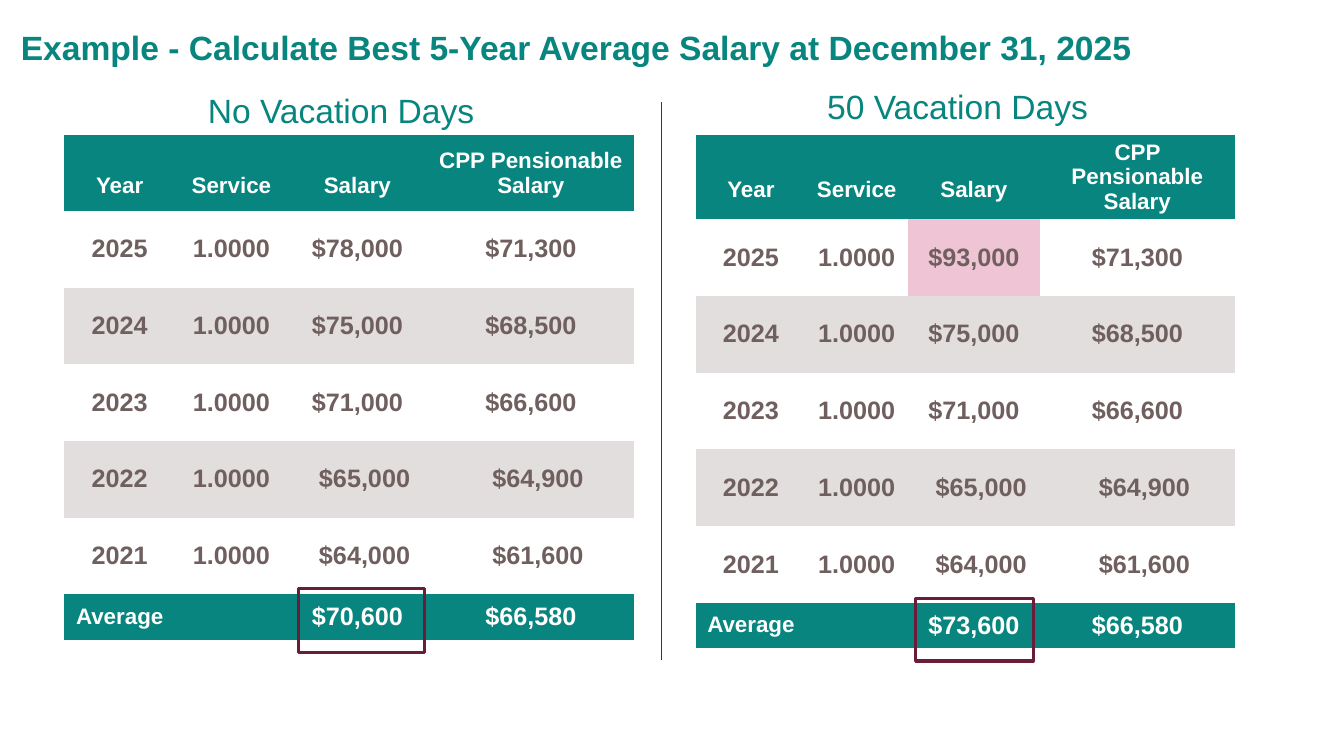
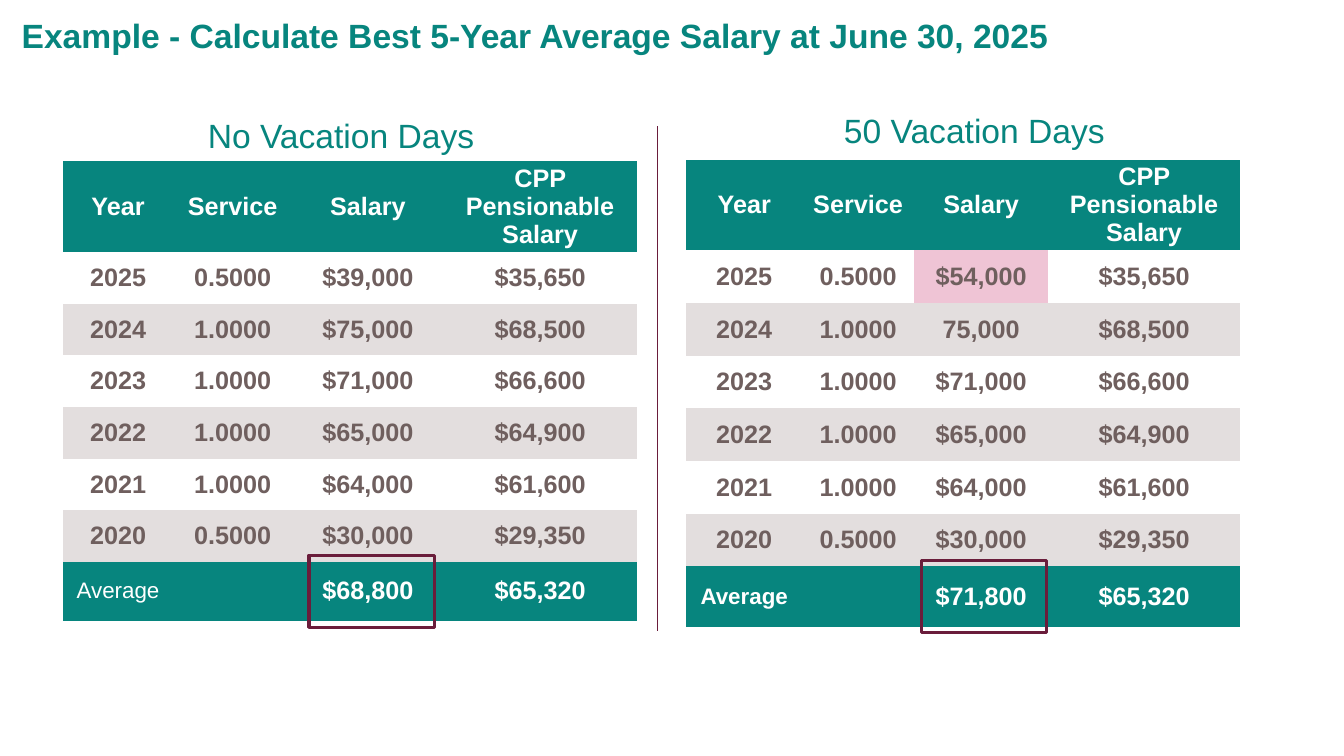
from dataclasses import dataclass

from lxml.etree import SubElement
from pptx import Presentation
from pptx.dml.color import RGBColor
from pptx.enum.shapes import MSO_CONNECTOR, MSO_SHAPE
from pptx.enum.text import MSO_ANCHOR, PP_ALIGN
from pptx.oxml.ns import qn
from pptx.util import Inches, Pt

GRID_COLUMNS, GRID_ROWS = 160, 90
SLIDE_HEIGHT = Inches(7.5)
SLIDE_WIDTH = SLIDE_HEIGHT * GRID_COLUMNS // GRID_ROWS
PLAIN_TABLE_STYLE = "{2D5ABB26-0587-4C30-8999-92F81FD0307C}"
HEADINGS = ("Year", "Service", "Salary", "CPP Pensionable Salary")
SALARY_COLUMN = 2
CAPTION_SIZE = (66, 5)


@dataclass(frozen=True)
class Theme:
    font: str = "Arial"
    teal: str = "07857E"
    white: str = "FFFFFF"
    band: str = "E3DEDE"
    highlight: str = "EFC4D5"
    body_text: str = "6F5F5E"
    accent: str = "6A1D3B"
    title_size: int = 24
    body_size: int = 18
    label_size: int = 16
    divider_width: float = 0.5
    frame_width: float = 2.25


THEME = Theme()


@dataclass(frozen=True)
class Panel:
    caption: str
    caption_at: tuple
    table_at: tuple
    column_widths: tuple
    header_height: float
    body_height: float
    average_height: float
    salaries: tuple
    average_salary: str
    frame: tuple
    highlighted: bool = False
    bold_average: bool = True


@dataclass(frozen=True)
class Example:
    title: str
    title_box: tuple
    divider: tuple
    years: tuple
    services: tuple
    pensionable: tuple
    average_pensionable: str
    panels: tuple
    header_size: int
    side_margin: float
    header_drop: float = 0
    shifted_years: tuple = ()


def grid(*cells):
    return [round(cell * SLIDE_HEIGHT / GRID_ROWS) for cell in cells]


def color(value):
    return RGBColor.from_string(value)


def write(text_frame, text, size, text_color, bold, alignment=PP_ALIGN.CENTER):
    text_frame.text = text
    paragraph = text_frame.paragraphs[0]
    paragraph.alignment = alignment
    for run in paragraph.runs:
        run.font.name = THEME.font
        run.font.size = Pt(size)
        run.font.bold = bold
        run.font.color.rgb = color(text_color)
    return paragraph


def add_text(slide, box, text, bold=False, alignment=PP_ALIGN.CENTER):
    text_frame = slide.shapes.add_textbox(*grid(*box)).text_frame
    text_frame.word_wrap = True
    text_frame.vertical_anchor = MSO_ANCHOR.MIDDLE
    return write(text_frame, text, THEME.title_size, THEME.teal, bold, alignment)


def add_title(slide, example):
    paragraph = add_text(slide, example.title_box, example.title, True, PP_ALIGN.LEFT)
    paragraph.line_spacing = 0.9


def add_divider(slide, column, top, bottom):
    line = slide.shapes.add_connector(
        MSO_CONNECTOR.STRAIGHT, *grid(column, top, column, bottom)
    )
    line.line.color.rgb = color(THEME.accent)
    line.line.width = Pt(THEME.divider_width)
    SubElement(line.element.spPr, qn("a:effectLst"))


def add_frame(slide, box):
    frame = slide.shapes.add_shape(MSO_SHAPE.RECTANGLE, *grid(*box))
    frame.shadow.inherit = False
    frame.fill.background()
    frame.line.color.rgb = color(THEME.accent)
    frame.line.width = Pt(THEME.frame_width)


def fill_cell(cell, text, fill, size, text_color, side_margin, bold=True):
    cell.fill.solid()
    cell.fill.fore_color.rgb = color(fill)
    cell.vertical_anchor = MSO_ANCHOR.MIDDLE
    cell.margin_left = cell.margin_right = grid(side_margin)[0]
    cell.margin_top = cell.margin_bottom = 0
    if text:
        write(cell.text_frame, text, size, text_color, bold)


def add_plain_table(slide, position, widths, heights):
    graphic_frame = slide.shapes.add_table(
        len(heights), len(widths), *grid(*position, sum(widths), sum(heights))
    )
    table = graphic_frame.table
    table.first_row = table.horz_banding = False
    for style in graphic_frame.element.iter(qn("a:tableStyleId")):
        style.text = PLAIN_TABLE_STYLE
    for column, width in zip(table.columns, grid(*widths)):
        column.width = width
    for row, height in zip(table.rows, grid(*heights)):
        row.height = height
    return table


def add_salary_table(slide, example, panel):
    records = list(
        zip(example.years, example.services, panel.salaries, example.pensionable)
    )
    heights = [panel.header_height, *[panel.body_height] * len(records),
               panel.average_height]
    table = add_plain_table(slide, panel.table_at, panel.column_widths, heights)
    margin = example.side_margin

    for index, heading in enumerate(HEADINGS):
        cell = table.cell(0, index)
        fill_cell(cell, heading, THEME.teal, example.header_size, THEME.white, margin)
        if heading != HEADINGS[-1]:
            cell.margin_top = grid(example.header_drop)[0]

    for row, record in enumerate(records, 1):
        for column, text in enumerate(record):
            fill = THEME.white if row % 2 else THEME.band
            if panel.highlighted and (row, column) == (1, SALARY_COLUMN):
                fill = THEME.highlight
            cell = table.cell(row, column)
            fill_cell(cell, text, fill, THEME.body_size, THEME.body_text, margin)
            if record[0] in example.shifted_years and column >= SALARY_COLUMN:
                cell.margin_left = grid(margin + 1.7)[0]

    averages = ("Average", "", panel.average_salary, example.average_pensionable)
    for column, text in enumerate(averages):
        is_label = column == 0
        fill_cell(
            table.cell(len(records) + 1, column), text, THEME.teal,
            THEME.label_size if is_label else THEME.body_size, THEME.white,
            margin, panel.bold_average or not is_label,
        )


def add_example(presentation, example):
    slide = presentation.slides.add_slide(presentation.slide_layouts[6])
    add_title(slide, example)
    for panel in example.panels:
        add_salary_table(slide, example, panel)
        add_text(slide, (*panel.caption_at, *CAPTION_SIZE), panel.caption)
        add_frame(slide, panel.frame)
    add_divider(slide, *example.divider)


PAST_SALARIES = ("$71,000", "$65,000", "$64,000")
PAST_PENSIONABLE = ("$68,500", "$66,600", "$64,900", "$61,600")

DECEMBER = Example(
    title="Example - Calculate Best 5-Year Average Salary at December 31, 2025",
    title_box=(1.3, 0.5, 144.6, 10.7),
    divider=(78.7, 12.2, 78.6),
    years=("2025", "2024", "2023", "2022", "2021"),
    services=("1.0000",) * 5,
    pensionable=("$71,300", *PAST_PENSIONABLE),
    average_pensionable="$66,580",
    header_size=THEME.label_size,
    side_margin=1.2,
    header_drop=3,
    shifted_years=("2022", "2021"),
    panels=(
        Panel(
            caption="No Vacation Days", caption_at=(7.6, 10.6),
            table_at=(7.6, 16.1), column_widths=(13.3, 13.3, 16.7, 24.6),
            header_height=9, body_height=9.13, average_height=5.4,
            salaries=("$78,000", "$75,000", *PAST_SALARIES),
            average_salary="$70,600", frame=(35.5, 70.1, 15, 7.6),
        ),
        Panel(
            caption="50 Vacation Days", caption_at=(81, 10.1),
            table_at=(82.9, 16.1), column_widths=(13, 12.2, 15.7, 23.2),
            header_height=10, body_height=9.13, average_height=5.4,
            salaries=("$93,000", "$75,000", *PAST_SALARIES),
            average_salary="$73,600", frame=(109, 71.3, 14, 7.4),
            highlighted=True,
        ),
    ),
)

JUNE = Example(
    title="Example - Calculate Best 5-Year Average Salary at June 30, 2025",
    title_box=(1.4, 0, 138, 9),
    divider=(78.2, 15, 75.1),
    years=("2025", "2024", "2023", "2022", "2021", "2020"),
    services=("0.5000", *["1.0000"] * 4, "0.5000"),
    pensionable=("$35,650", *PAST_PENSIONABLE, "$29,350"),
    average_pensionable="$65,320",
    header_size=THEME.body_size,
    side_margin=0.1,
    panels=(
        Panel(
            caption="No Vacation Days", caption_at=(7.6, 13.6),
            table_at=(7.5, 19.2), column_widths=(13.1, 14.2, 18, 23),
            header_height=10.2, body_height=6.15, average_height=7,
            salaries=("$39,000", "$75,000", *PAST_SALARIES, "$30,000"),
            average_salary="$68,800", frame=(36.8, 66.1, 14.9, 8.6),
            bold_average=False,
        ),
        Panel(
            caption="50 Vacation Days", caption_at=(83, 13),
            table_at=(81.7, 19), column_widths=(13.8, 13.3, 16, 22.8),
            header_height=10.2, body_height=6.27, average_height=7.2,
            salaries=("$54,000", "75,000", *PAST_SALARIES, "$30,000"),
            average_salary="$71,800", frame=(109.7, 66.7, 14.9, 8.6),
            highlighted=True,
        ),
    ),
)


def main():
    presentation = Presentation()
    presentation.slide_width = SLIDE_WIDTH
    presentation.slide_height = SLIDE_HEIGHT
    for example in (DECEMBER, JUNE):
        add_example(presentation, example)
    presentation.save("out.pptx")


if __name__ == "__main__":
    main()
